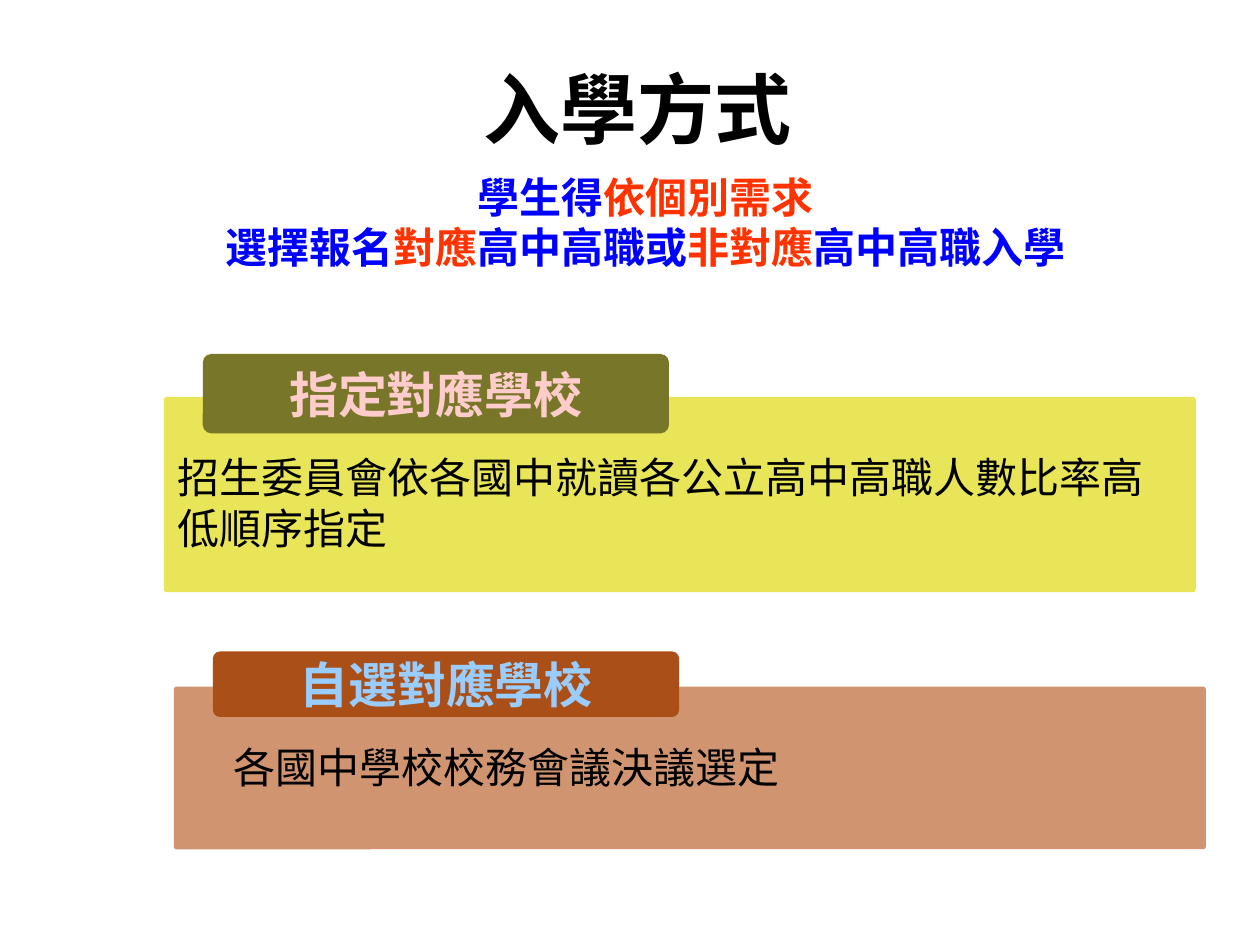
import pptx
import pptx.util
import pptx.dml.color
import pptx.enum.shapes
import pptx.enum.text
from dataclasses import dataclass

Inches = pptx.util.Inches
Align = pptx.enum.text.PP_ALIGN
Anchor = pptx.enum.text.MSO_ANCHOR


@dataclass(frozen=True)
class Theme:
    font: str = "Arial"
    black: str = "000000"
    blue: str = "0000FF"
    red: str = "FF3300"
    lime: str = "E8E558"
    olive: str = "787628"
    pink: str = "FFCCCC"
    tan: str = "D09570"
    rust: str = "A94F17"
    sky: str = "99CCFF"
    title: int = 44
    label: int = 28
    body: int = 24


THEME = Theme()


def rgb(code):
    return pptx.dml.color.RGBColor.from_string(code)


def style(para, size, color=None, bold=False, align=Align.LEFT):
    para.alignment = align
    para.font.name = THEME.font
    para.font.size = pptx.util.Pt(size)
    para.font.bold = bold
    if color:
        para.font.color.rgb = rgb(color)


def add_box(slide, left, top, width, height, fill, round_by):
    kind = pptx.enum.shapes.MSO_SHAPE.ROUNDED_RECTANGLE
    box = slide.shapes.add_shape(
        kind, Inches(left), Inches(top), Inches(width), Inches(height))
    box.adjustments[0] = round_by
    box.shadow.inherit = False
    box.fill.solid()
    box.fill.fore_color.rgb = rgb(fill)
    box.line.fill.background()
    box.text_frame.word_wrap = True
    return box.text_frame


def add_text(slide, left, top, width, height, anchor):
    box = slide.shapes.add_textbox(
        Inches(left), Inches(top), Inches(width), Inches(height))
    frame = box.text_frame
    frame.word_wrap = True
    frame.vertical_anchor = anchor
    return frame


def add_title(slide, text):
    para = add_text(slide, 3.74, 0.44, 2.95, 0.83, Anchor.MIDDLE).paragraphs[0]
    para.text = text
    style(para, THEME.title, THEME.black, True)


def add_intro(slide, lines):
    frame = add_text(slide, 1.69, 1.31, 6.87, 0.9, Anchor.TOP)
    for index, line in enumerate(lines):
        para = frame.add_paragraph() if index else frame.paragraphs[0]
        style(para, THEME.body, bold=True, align=Align.CENTER)
        for text, color in line:
            run = para.add_run()
            run.text = text
            run.font.color.rgb = rgb(color)


def add_panel(slide, left, top, height, fill, text, indent=0):
    frame = add_box(slide, left, top, 8.19, height, fill, 0.016)
    frame.vertical_anchor = Anchor.TOP
    frame.margin_top = Inches(0.43)
    frame.margin_left = Inches(0.1 + indent)
    para = frame.paragraphs[0]
    para.text = text
    style(para, THEME.body, THEME.black)


def add_label(slide, left, top, height, fill, text, color):
    frame = add_box(slide, left, top, 3.7, height, fill, 0.108)
    frame.vertical_anchor = Anchor.MIDDLE
    para = frame.paragraphs[0]
    para.text = text
    style(para, THEME.label, color, True, Align.CENTER)


def main():
    deck = pptx.Presentation()
    deck.slide_width, deck.slide_height = Inches(10), Inches(7.5)
    slide = deck.slides.add_slide(deck.slide_layouts[6])

    add_panel(slide, 1.3, 3.15, 1.55, THEME.lime,
              "招生委員會依各國中就讀各公立高中高職人數比率高低順序指定")
    add_label(slide, 1.61, 2.81, 0.63, THEME.olive, "指定對應學校", THEME.pink)
    add_panel(slide, 1.38, 5.45, 1.29, THEME.tan,
              "各國中學校校務會議決議選定", indent=0.37)
    add_label(slide, 1.69, 5.17, 0.52, THEME.rust, "自選對應學校", THEME.sky)

    add_title(slide, "入學方式")
    add_intro(slide, [
        [("學生得", THEME.blue), ("依個別需求", THEME.red)],
        [("選擇報名", THEME.blue), ("對應", THEME.red),
         ("高中高職或", THEME.blue), ("非對應", THEME.red),
         ("高中高職入學", THEME.blue)],
    ])
    deck.save("out.pptx")


if __name__ == "__main__":
    main()
